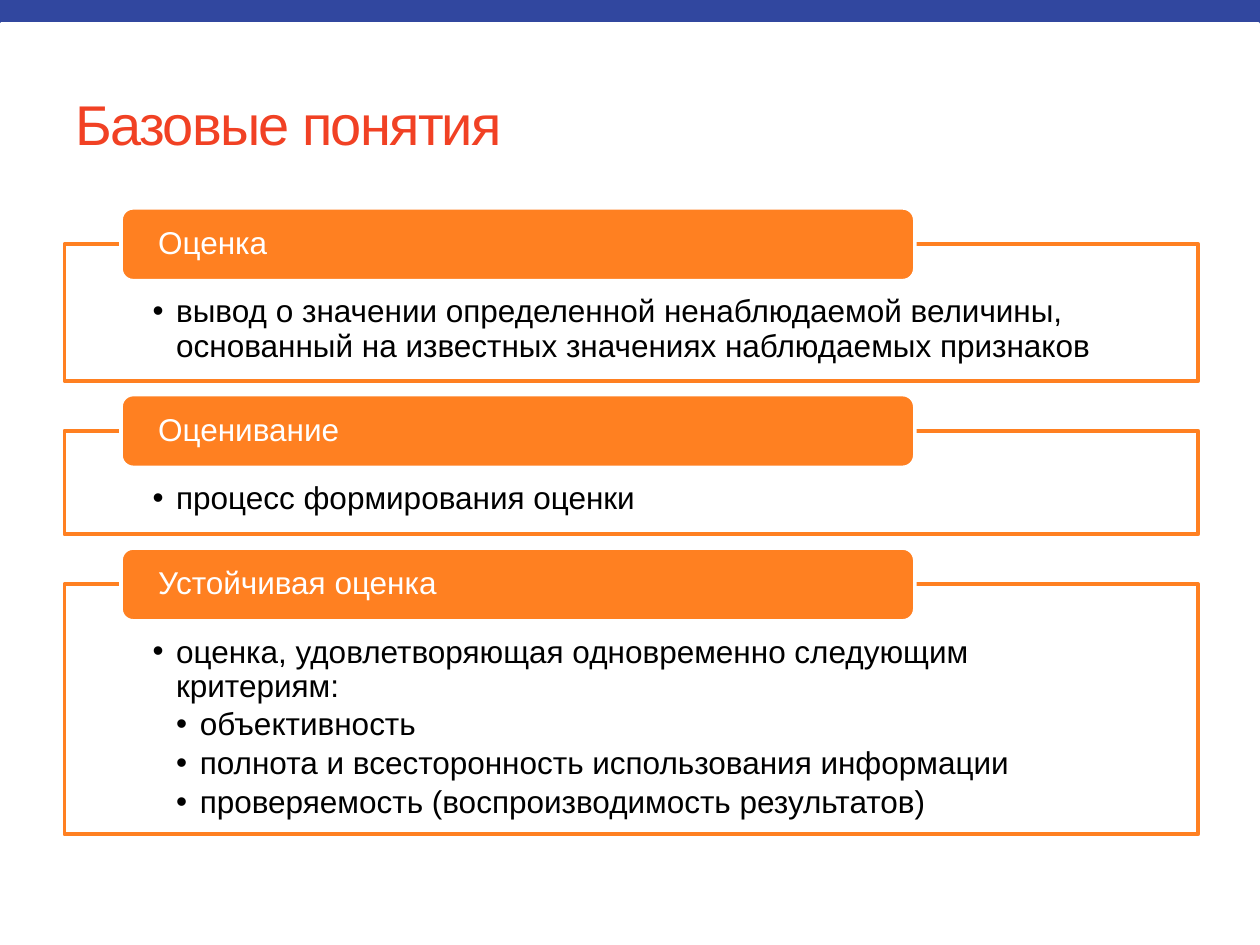
from lxml.etree import SubElement as Sub
from pptx import Presentation
from pptx.dml.color import RGBColor as RGB
from pptx.enum.shapes import MSO_SHAPE as Kind
from pptx.enum.text import MSO_ANCHOR as Anchor, PP_ALIGN as Align
from pptx.oxml.ns import qn
from pptx.util import Pt

BLUE = RGB(0x31, 0x47, 0x9F)
RED = RGB(0xF1, 0x41, 0x24)
ORANGE = RGB(0xFF, 0x80, 0x21)
WHITE = RGB(0xFF, 0xFF, 0xFF)
BLACK = RGB(0, 0, 0)

LEFT, WIDTH, TOP, GAP = 36.8, 648, 139.5, 28.5
TAG_H, TAG_UP = 41.6, 20.7
STEP = 13.5

TERMS = [
    ("Оценка", 78.2, [
        (1, "вывод о значении определенной ненаблюдаемой величины, "
            "основанный на известных значениях наблюдаемых признаков")]),
    ("Оценивание", 59.2, [(1, "процесс формирования оценки")]),
    ("Устойчивая оценка", 142.8, [
        (1, "оценка, удовлетворяющая одновременно следующим критериям:"),
        (2, "объективность"),
        (2, "полнота и всесторонность использования информации"),
        (2, "проверяемость (воспроизводимость результатов)")]),
]


def add_box(slide, kind, x, y, w, h, fill, line=None):
    """Add a filled shape without shadow."""
    box = slide.shapes.add_shape(kind, Pt(x), Pt(y), Pt(w), Pt(h))
    box.shadow.inherit = False
    box.fill.solid()
    box.fill.fore_color.rgb = fill
    if line is None:
        box.line.fill.background()
    else:
        box.line.color.rgb = line
        box.line.width = Pt(2.08)
    return box


def set_frame(box, anchor, side, top=0, bottom=0):
    """Set the anchor and margins of a shape's text."""
    frame = box.text_frame
    frame.word_wrap = True
    frame.vertical_anchor = anchor
    frame.margin_left = frame.margin_right = Pt(side)
    frame.margin_top, frame.margin_bottom = Pt(top), Pt(bottom)
    return frame


def style(para, size, color):
    """Align a paragraph left and format its runs."""
    para.alignment = Align.LEFT
    for run in para.runs:
        run.font.name = "Arial"
        run.font.size = Pt(size)
        run.font.color.rgb = color


def add_dot(para, level):
    """Give a paragraph a bullet with a hanging indent."""
    para.level = level
    props = para._p.get_or_add_pPr()
    props.set("marL", str(Pt(STEP * level)))
    props.set("indent", str(Pt(-STEP)))
    Sub(props, qn("a:buFont"), typeface="Arial")
    Sub(props, qn("a:buChar"), char="•")


def add_title(slide, text):
    """Fill the title placeholder and bring it forward."""
    title = slide.shapes.title
    title.left, title.top = Pt(36), Pt(31.7)
    title.width, title.height = Pt(648), Pt(77.8)
    title.text_frame.text = text
    title.text_frame.vertical_anchor = Anchor.MIDDLE
    para = title.text_frame.paragraphs[0]
    style(para, 32, RED)
    para.runs[0].font._element.set("spc", "-100")
    slide.shapes.element.append(title.element)


def add_list(slide, y, h, items):
    """Add a framed bullet list."""
    box = add_box(slide, Kind.RECTANGLE, LEFT, y, WIDTH, h, WHITE, ORANGE)
    color = box.fill._xPr.find(".//" + qn("a:srgbClr"))
    Sub(color, qn("a:alpha"), val="90000")
    frame = set_frame(box, Anchor.TOP, 50.4, 29.5, 10.1)
    frame.text = "\n".join(text for _, text in items)
    for para, (level, _) in zip(frame.paragraphs, items):
        style(para, 18, BLACK)
        para.line_spacing = 0.9
        para.space_after = Pt(2.7)
        add_dot(para, level)


def add_tag(slide, y, text):
    """Add the rounded heading over a list's top edge."""
    box = add_box(slide, Kind.ROUNDED_RECTANGLE, 69.2, y - TAG_UP, 453.6,
                  TAG_H, ORANGE, WHITE)
    frame = set_frame(box, Anchor.MIDDLE, 19.2)
    frame.text = text
    style(frame.paragraphs[0], 18, WHITE)
    frame.paragraphs[0].line_spacing = 0.9


def main():
    """Build the slide and save it."""
    deck = Presentation()
    deck.slide_width, deck.slide_height = Pt(720), Pt(540)
    slide = deck.slides.add_slide(deck.slide_layouts[5])
    add_box(slide, Kind.RECTANGLE, 0, 0, 720, 28.8, BLUE)
    add_box(slide, Kind.RECTANGLE, 0.9, 13.7, 718, 28, WHITE, WHITE)
    add_title(slide, "Базовые понятия")
    y = TOP
    for term, h, items in TERMS:
        add_list(slide, y, h, items)
        add_tag(slide, y, term)
        y += h + GAP
    deck.save("out.pptx")


if __name__ == "__main__":
    main()
